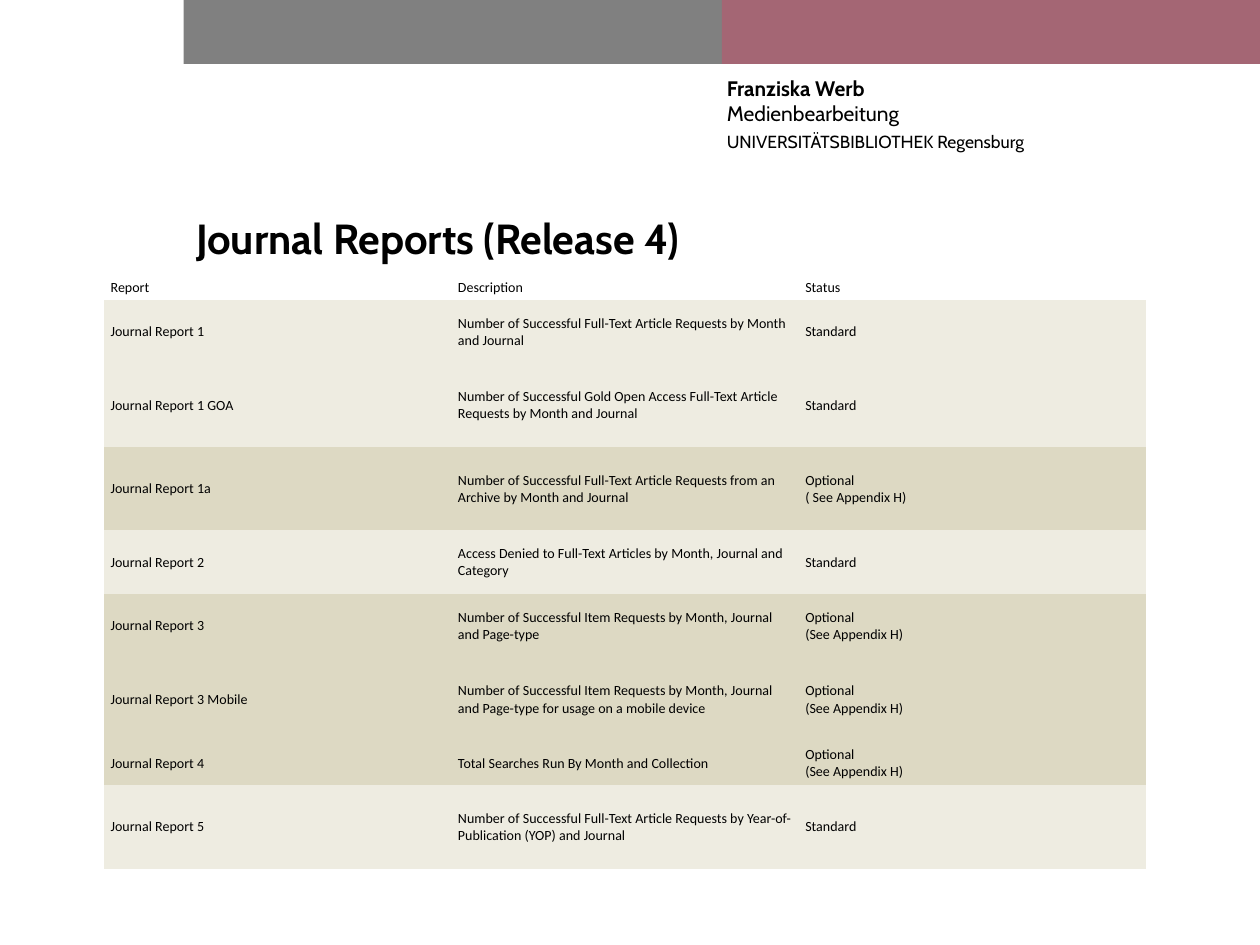
from pptx import Presentation
from pptx.dml.color import RGBColor
from pptx.enum.shapes import MSO_SHAPE
from pptx.enum.text import MSO_ANCHOR
from pptx.util import Pt

RECTANGLE = MSO_SHAPE.RECTANGLE
TOP, MIDDLE = MSO_ANCHOR.TOP, MSO_ANCHOR.MIDDLE

BLACK = RGBColor(0x00, 0x00, 0x00)
GRAY = RGBColor(0x80, 0x80, 0x80)
MAUVE = RGBColor(0xA4, 0x66, 0x74)
LIGHT_SAND = RGBColor(0xEE, 0xEC, 0xE1)
DARK_SAND = RGBColor(0xDD, 0xD9, 0xC3)

HEADING_FONT, TABLE_FONT = "Cabin", "Calibri"
PLAIN_TABLE_STYLE = "{2D5ABB26-0587-4C30-8999-92F81FD0307C}"

HEADER = ("Report", "Description", "Status")
HEADER_HEIGHT = 14.4
TALL, MEDIUM, SHORT = 47.6, 36.5, 25.2
STANDARD = "Standard"
OPTIONAL = "Optional\v(See Appendix H)"
REPORTS = [
    (MEDIUM, "Journal Report 1",
     "Number of Successful Full-Text Article Requests by Month and Journal", STANDARD),
    (TALL, "Journal Report 1 GOA",
     "Number of Successful Gold Open Access Full-Text Article Requests by Month and Journal",
     STANDARD),
    (TALL, "Journal Report 1a",
     "Number of Successful Full-Text Article Requests from an Archive by Month and Journal",
     "Optional\v( See Appendix H)"),
    (MEDIUM, "Journal Report 2",
     "Access Denied to Full-Text Articles by Month, Journal and Category", STANDARD),
    (MEDIUM, "Journal Report 3",
     "Number of Successful Item Requests by Month, Journal and Page-type", OPTIONAL),
    (TALL, "Journal Report 3 Mobile",
     "Number of Successful Item Requests by Month, Journal and Page-type "
     "for usage on a mobile device", OPTIONAL),
    (SHORT, "Journal Report 4", "Total Searches Run By Month and Collection", OPTIONAL),
    (TALL, "Journal Report 5",
     "Number of Successful Full-Text Article Requests by Year-of-Publication (YOP) and Journal",
     STANDARD),
]


def format_runs(paragraph, font_name, size, bold=False):
    for run in paragraph.runs:
        run.font.name = font_name
        run.font.size = Pt(size)
        run.font.bold = bold
        run.font.color.rgb = BLACK


def add_text_frame(slide, left, top, width, height):
    text_frame = slide.shapes.add_textbox(Pt(left), Pt(top), Pt(width), Pt(height)).text_frame
    text_frame.word_wrap = True
    text_frame.vertical_anchor = TOP
    return text_frame


def add_color_bar(slide, left, top, width, height):
    """Two equal blocks side by side."""
    block_width = width / 2
    for index, color in enumerate((GRAY, MAUVE)):
        block = slide.shapes.add_shape(RECTANGLE, Pt(left + index * block_width), Pt(top),
                                       Pt(block_width), Pt(height))
        block.shadow.inherit = False
        block.fill.solid()
        block.fill.fore_color.rgb = color
        block.line.fill.background()


def add_author(slide, left, top, width, height):
    text_frame = add_text_frame(slide, left, top, width, height)
    text_frame.margin_left = text_frame.margin_right = 0
    text_frame.margin_top = text_frame.margin_bottom = 0
    text_frame.text = "Franziska Werb\vMedienbearbeitung\nUNIVERSITÄTSBIBLIOTHEK Regensburg"
    for paragraph, size in zip(text_frame.paragraphs, (12, 10)):
        paragraph.space_after = Pt(3)
        format_runs(paragraph, HEADING_FONT, size)
    text_frame.paragraphs[0].runs[0].font.bold = True


def add_title(slide, left, top, width, height):
    text_frame = add_text_frame(slide, left, top, width, height)
    text_frame.text = "Journal Reports (Release 4)"
    format_runs(text_frame.paragraphs[0], HEADING_FONT, 24, bold=True)


def fill_cell(cell, text, color):
    cell.text = text
    cell.vertical_anchor = MIDDLE
    cell.margin_left = cell.margin_right = Pt(3.6)
    cell.margin_top = cell.margin_bottom = Pt(1.4)
    if color is None:
        cell.fill.background()
    else:
        cell.fill.solid()
        cell.fill.fore_color.rgb = color
    format_runs(cell.text_frame.paragraphs[0], TABLE_FONT, 8)


def add_report_table(slide, left, top, width):
    """Standard reports get the light fill, optional ones the dark fill."""
    rows = [(HEADER_HEIGHT, *HEADER)] + REPORTS
    height = sum(row[0] for row in rows)
    frame = slide.shapes.add_table(len(rows), len(HEADER), Pt(left), Pt(top),
                                   Pt(width), Pt(height))
    table = frame.table
    table.first_row = table.horz_banding = False
    table._tbl.tblPr.find("{*}tableStyleId").text = PLAIN_TABLE_STYLE
    for column in table.columns:
        column.width = Pt(width / len(HEADER))
    for index, (row_height, *texts) in enumerate(rows):
        table.rows[index].height = Pt(row_height)
        if index == 0:
            color = None
        else:
            color = LIGHT_SAND if texts[-1] == STANDARD else DARK_SAND
        for cell, text in zip(table.rows[index].cells, texts):
            fill_cell(cell, text, color)


def main():
    presentation = Presentation()
    presentation.slide_width, presentation.slide_height = Pt(720), Pt(540)
    slide = presentation.slides.add_slide(presentation.slide_layouts[6])
    add_color_bar(slide, 105, 0, 615, 36.5)
    add_author(slide, 415.4, 43.2, 291, 67.7)
    add_title(slide, 105, 118, 566, 54.7)
    add_report_table(slide, 59.6, 157, 595.5)
    presentation.save("out.pptx")


if __name__ == "__main__":
    main()
